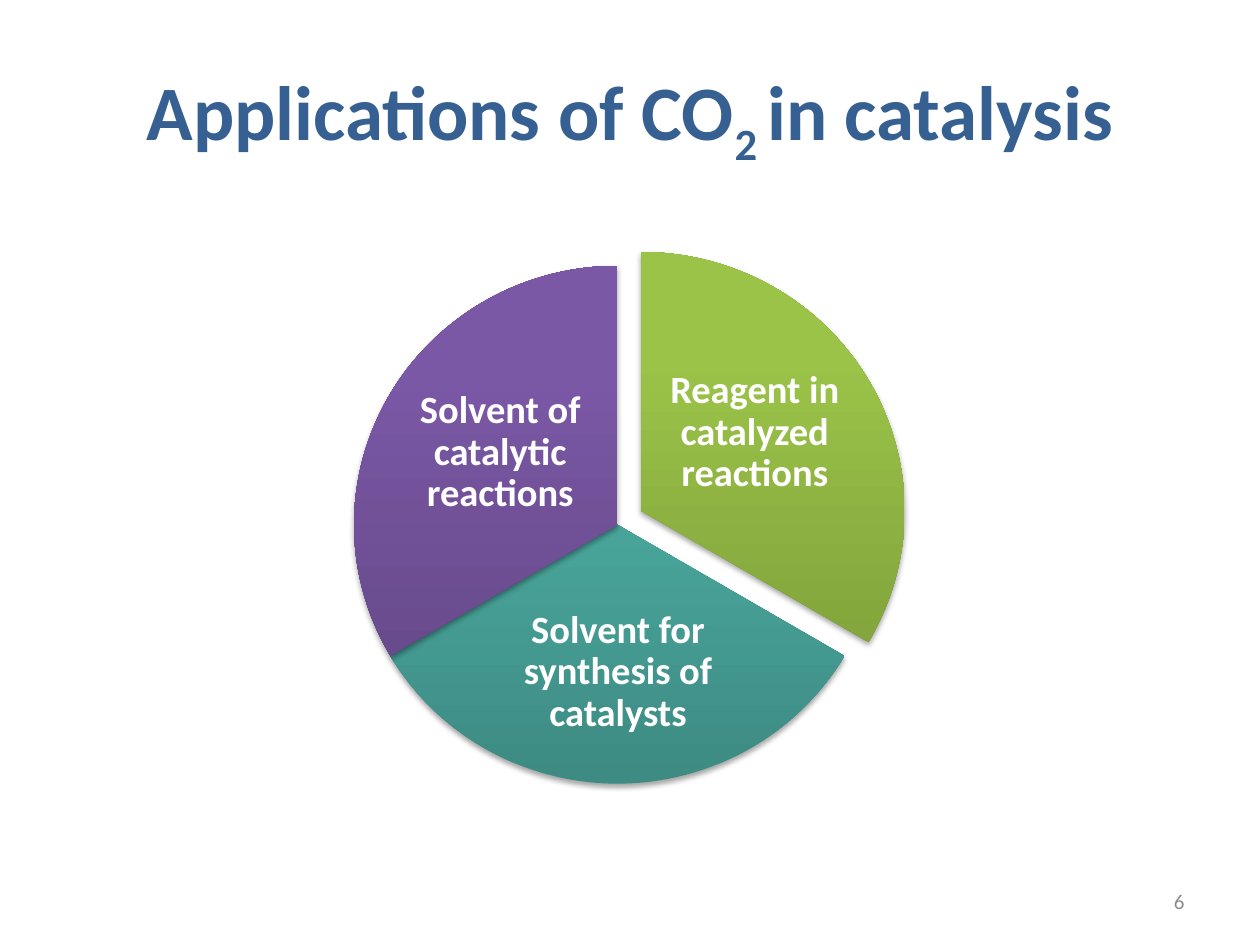
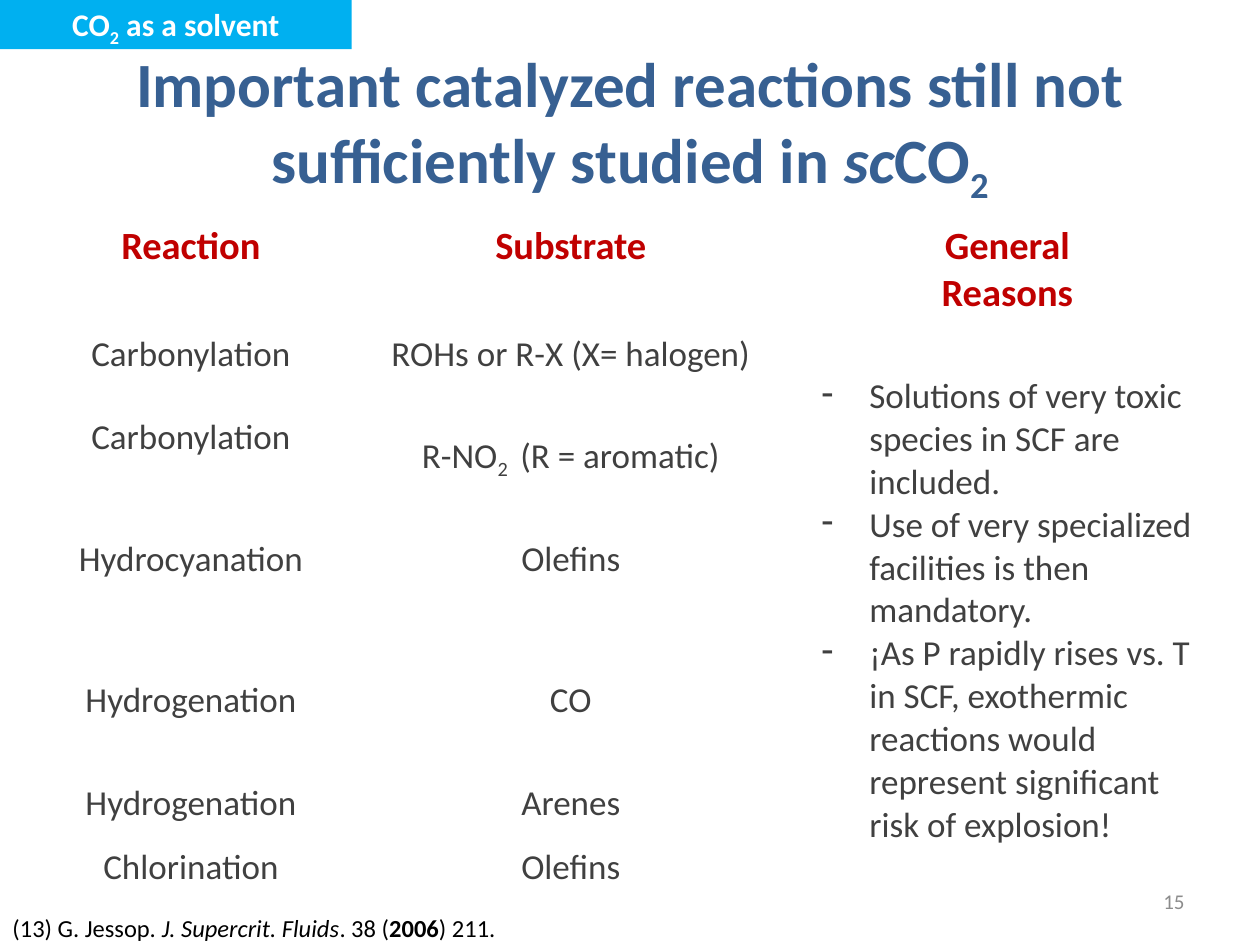
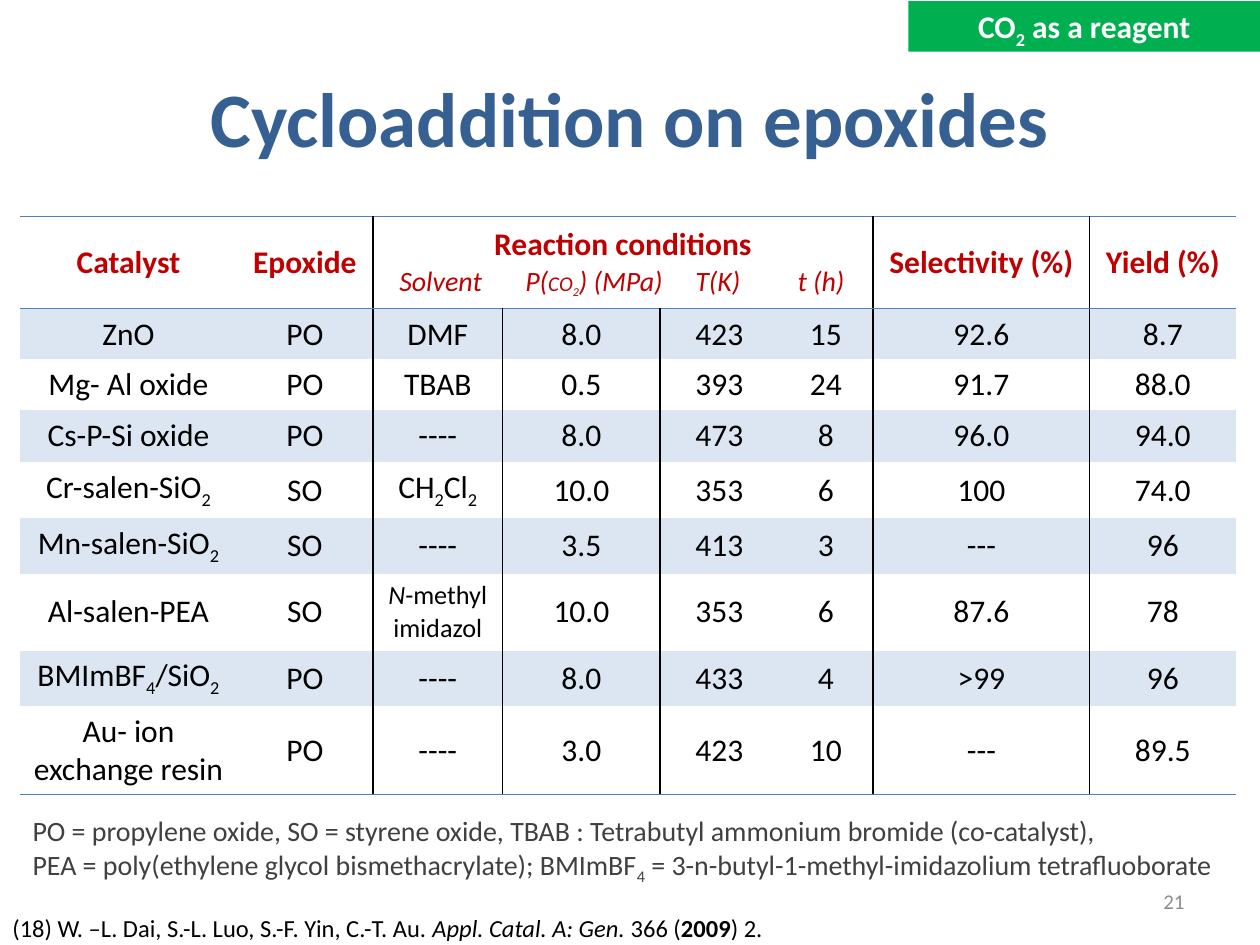
from dataclasses import dataclass
from typing import Any

from lxml.etree import SubElement
from pptx import Presentation
from pptx.dml.color import RGBColor
from pptx.enum.shapes import MSO_SHAPE as Preset
from pptx.enum.text import MSO_ANCHOR as Anchor
from pptx.enum.text import MSO_AUTO_SIZE as AutoSize
from pptx.enum.text import PP_ALIGN as Align
from pptx.oxml.ns import qn
from pptx.util import Emu, Inches, Pt

# Slide grid: 100 columns by 75 rows of square cells
SLIDE_WIDTH, SLIDE_HEIGHT = Inches(10), Inches(7.5)
COLUMNS, ROWS = 100, 75
UNIT = SLIDE_WIDTH / COLUMNS

# Shared look
FONT = "Calibri"
NO_STYLE_TABLE = "{2D5ABB26-0587-4C30-8999-92F81FD0307C}"
TITLE_BLUE = RGBColor(0x37, 0x60, 0x92)
HEADER_RED = RGBColor(0xC0, 0x00, 0x00)
RULE_BLUE = RGBColor(0x4F, 0x81, 0xBD)
ROW_TINT = RGBColor(0xDC, 0xE6, 0xF2)
SOLVENT_CYAN = RGBColor(0x00, 0xB0, 0xF0)
REAGENT_GREEN = RGBColor(0x00, 0xB0, 0x50)
BODY_GREY = RGBColor(0x40, 0x40, 0x40)
NUMBER_GREY = RGBColor(0x8C, 0x8C, 0x8C)
BLACK = RGBColor(0x00, 0x00, 0x00)
WHITE = RGBColor(0xFF, 0xFF, 0xFF)

# Marks that switch a format on and off inside a text
MARKS: dict[str, dict[str, Any]] = {
    "~": {"baseline": -25000},
    "*": {"italic": True},
    "^": {"bold": True},
    "`": {"size": Pt(12)},
    "|": {"size": Pt(15)},
}


@dataclass(frozen=True)
class Frame:
    """A place on the slide, in grid columns and rows."""
    left: float
    top: float
    width: float
    height: float

    def lengths(self) -> tuple[Emu, ...]:
        return tuple(map(grid, (self.left, self.top, self.width, self.height)))


@dataclass(frozen=True)
class Style:
    size: float
    color: RGBColor
    bold: bool = False
    align: Align = Align.LEFT
    line_spacing: float | None = None


@dataclass(frozen=True)
class Slice:
    text: str
    label: Frame
    dark: RGBColor
    light: RGBColor
    shift: tuple[float, float] = (0, 0)


@dataclass(frozen=True)
class Band:
    text: str
    color: RGBColor
    left: float
    top: float


TITLE = Style(44, TITLE_BLUE, True, Align.CENTER)
LONG_TITLE = Style(36, TITLE_BLUE, True, Align.CENTER)
BAND = Style(18, WHITE, True, Align.CENTER)
REFERENCE = Style(14, BLACK)
NUMBER = Style(12, NUMBER_GREY, align=Align.RIGHT)
SLICE_LABEL = Style(22, WHITE, True, Align.CENTER, 0.9)
REACTION_HEAD = Style(22, HEADER_RED, True, Align.CENTER)
REACTION_CELL = Style(20, BODY_GREY, align=Align.CENTER)
REASON = Style(20, BODY_GREY)
CATALYST_HEAD = Style(18, HEADER_RED, True, Align.CENTER)
CONDITION_HEAD = Style(16, HEADER_RED)
CATALYST_CELL = Style(18, BLACK, align=Align.CENTER)
ABBREVIATION = Style(16, BODY_GREY, align=Align.JUSTIFY)

# Slide 1: three equal slices, clockwise from the top
PIE_FRAME = Frame(28.1, 21.1, 41.8, 41.1)
SLICES = [
    Slice("Reagent in catalyzed reactions", Frame(52.8, 27.5, 14.2, 13.7),
          RGBColor(0x77, 0x97, 0x37), RGBColor(0x9B, 0xC3, 0x48), (1.9, -1.1)),
    Slice("Solvent for synthesis of catalysts", Frame(39.6, 47, 18.9, 12.7),
          RGBColor(0x3D, 0x8B, 0x83), RGBColor(0x50, 0xB5, 0xAA)),
    Slice("Solvent of catalytic reactions", Frame(32.6, 29.1, 14.2, 13.7),
          RGBColor(0x5F, 0x44, 0x80), RGBColor(0x7B, 0x58, 0xA6)),
]

# Slide 2: reactions and the reasons they are little studied
REACTION_WIDTHS = [22.5, 37.8, 31.5]
REACTION_HEIGHTS = [8.4, 5.1, 7.7, 11.2, 11.2, 5.1, 5.1]
REACTION_HEADS = ["Reaction", "Substrate", "General\nReasons"]
REACTIONS = [
    ("Carbonylation", "ROHs or R-X (X= halogen)"),
    ("Carbonylation", "R-NO~2 ~ (R = aromatic)"),
    ("Hydrocyanation", "Olefins"),
    ("Hydrogenation", "CO"),
    ("Hydrogenation", "Arenes"),
    ("Chlorination", "Olefins"),
]
LOWERED_SUBSTRATE = (2, 1)
REASONS = [
    "Solutions of very toxic species in SCF are included.",
    "Use of very specialized facilities is then mandatory.",
    "¡As P rapidly rises vs. T in SCF, exothermic reactions would "
    "represent significant risk of explosion!",
]

# Slide 3: catalysts
CATALYST_WIDTHS = [17.2, 10.8, 10.3, 12.5, 9.4, 7.5, 17.2, 11.6]
CATALYST_HEIGHTS = [7.3, 4, 4, 4.2, 4.4, 4.4, 6.1, 4.4, 7]
CATALYST_HEADS = ["Catalyst", "Epoxide", "Reaction conditions", "", "", "",
                  "Selectivity (%)", "Yield (%)"]
CONDITIONS = "\t*Solvent\tP(`CO~2~`) (MPa)\tT(K)\tt (h)*"
CONDITION_TABS = [1.1, 11.1, 24.6, 32.7]
CONDITION_COLUMNS = (2, 5)
HEAD_DIVIDERS = (1, 5)
BODY_DIVIDERS = (1, 2, 5, 6)
CATALYSTS = [
    ("ZnO", "PO", "DMF", "8.0", "423", "15", "92.6", "8.7"),
    ("Mg- Al oxide", "PO", "TBAB", "0.5", "393", "24", "91.7", "88.0"),
    ("Cs-P-Si oxide", "PO", "----", "8.0", "473", "8", "96.0", "94.0"),
    ("Cr-salen-SiO~2~", "SO", "CH~2~Cl~2~", "10.0", "353", "6", "100", "74.0"),
    ("Mn-salen-SiO~2~", "SO", "----", "3.5", "413", "3", "---", "96"),
    ("Al-salen-PEA", "SO", "|*N*-methyl imidazol|", "10.0", "353", "6", "87.6", "78"),
    ("BMImBF~4~/SiO~2~", "PO", "----", "8.0", "433", "4", ">99", "96"),
    ("Au- ion exchange resin", "PO", "----", "3.0", "423", "10", "---", "89.5"),
]
ABBREVIATIONS = [
    "PO = propylene oxide, SO = styrene oxide, TBAB : Tetrabutyl ammonium "
    "bromide (co-catalyst),",
    "PEA = poly(ethylene glycol bismethacrylate); BMImBF~4~ = "
    "3-n-butyl-1-methyl-imidazolium tetrafluoborate",
]


def grid(cells: float) -> Emu:
    return Emu(round(cells * UNIT))


def set_all(target: Any, values: dict[str, Any]) -> None:
    for name, value in values.items():
        setattr(target, name, value)


# Text
def add_span(para: Any, text: str, style: Style, active: set[str]) -> None:
    span = para.add_run()
    span.text = text
    values = {"name": FONT, "size": Pt(style.size), "bold": style.bold}
    for mark in sorted(active):
        values.update(MARKS[mark])
    baseline = values.pop("baseline", None)
    set_all(span.font, values)
    span.font.color.rgb = style.color
    if baseline:
        span.font._rPr.set("baseline", str(baseline))


def write_para(para: Any, text: str, style: Style) -> None:
    set_all(para, {"alignment": style.align, "line_spacing": style.line_spacing})
    active: set[str] = set()
    pending = ""
    for char in text:
        if char not in MARKS:
            pending += char
            continue
        if pending:
            add_span(para, pending, style, active)
        pending = ""
        active ^= {char}
    if pending:
        add_span(para, pending, style, active)


def write(frame: Any, lines: list[str], style: Style) -> None:
    for index, line in enumerate(lines):
        para = frame.add_paragraph() if index else frame.paragraphs[0]
        write_para(para, line, style)


def add_text(shapes: Any, place: Frame, lines: list[str], style: Style,
             **values: Any) -> None:
    box = shapes.add_textbox(*place.lengths())
    set_all(box.text_frame, {"word_wrap": True, **values})
    write(box.text_frame, lines, style)


# Parts the slides share
def add_page(deck: Any, title: str, style: Style, place: Frame, number: int) -> Any:
    page = deck.slides.add_slide(deck.slide_layouts[5])
    holder = page.shapes.title
    set_all(holder, dict(zip(("left", "top", "width", "height"), place.lengths())))
    set_all(holder.text_frame, {"auto_size": AutoSize.NONE, "word_wrap": True,
                                "vertical_anchor": Anchor.MIDDLE})
    write(holder.text_frame, [title], style)
    add_text(page.shapes, Frame(71.7, 69.5, 23.3, 4), [str(number)], NUMBER,
             vertical_anchor=Anchor.MIDDLE)
    return page


def add_band(page: Any, band: Band) -> None:
    place = Frame(band.left, band.top, 27.9, 4)
    box = page.shapes.add_shape(Preset.RECTANGLE, *place.lengths())
    box.shadow.inherit = False
    box.fill.solid()
    box.fill.fore_color.rgb = band.color
    box.line.fill.background()
    box.text_frame.vertical_anchor = Anchor.TOP
    write(box.text_frame, [band.text], BAND)


def add_reference(page: Any, text: str, width: float) -> None:
    add_text(page.shapes, Frame(0, 72, width, 3.4), [text], REFERENCE)


# Tables
def add_grid_table(page: Any, left: float, top: float, widths: list[float],
                   heights: list[float]) -> Any:
    place = Frame(left, top, sum(widths), sum(heights))
    table = page.shapes.add_table(len(heights), len(widths), *place.lengths()).table
    set_all(table, {"first_row": False, "horz_banding": False})
    table._tbl.tblPr.find(qn("a:tableStyleId")).text = NO_STYLE_TABLE
    for column, width in zip(table.columns, widths):
        column.width = grid(width)
    for row, height in zip(table.rows, heights):
        row.height = grid(height)
    return table


def fill_cell(cell: Any, lines: list[str], style: Style,
              fill: RGBColor | None = None, anchor: Anchor = Anchor.MIDDLE) -> None:
    cell.vertical_anchor = anchor
    if fill is None:
        cell.fill.background()
    else:
        cell.fill.solid()
        cell.fill.fore_color.rgb = fill
    write(cell.text_frame, lines, style)


def add_borders(cell: Any, borders: dict[str, RGBColor]) -> None:
    properties = cell._tc.get_or_add_tcPr()
    for side in "LRTB":
        if side in borders:
            line = SubElement(properties, qn(f"a:ln{side}"), w=str(Pt(1)))
            fill = SubElement(line, qn("a:solidFill"))
            SubElement(fill, qn("a:srgbClr"), val=str(borders[side]))


def add_dash(para: Any, indent: float) -> None:
    properties = para._p.get_or_add_pPr()
    properties.set("marL", str(grid(indent)))
    properties.set("indent", str(-grid(indent)))
    SubElement(properties, qn("a:buChar"), char="-")


def add_tabs(para: Any, stops: list[float]) -> None:
    tabs = SubElement(para._p.get_or_add_pPr(), qn("a:tabLst"))
    for stop in stops:
        SubElement(tabs, qn("a:tab"), pos=str(grid(stop)), algn="l")


# Slices
def add_soft_shadow(shape: Any) -> None:
    effects = SubElement(shape._element.spPr, qn("a:effectLst"))
    shadow = SubElement(effects, qn("a:outerShdw"), blurRad=str(Pt(3.1)),
                        dist=str(Pt(1.8)), dir="5400000", rotWithShape="0")
    color = SubElement(shadow, qn("a:srgbClr"), val=str(BLACK))
    SubElement(color, qn("a:alpha"), val="35000")


def add_slice(shapes: Any, index: int, part: Slice) -> None:
    right, down = part.shift
    place = Frame(PIE_FRAME.left + right, PIE_FRAME.top + down,
                  PIE_FRAME.width, PIE_FRAME.height)
    wedge = shapes.add_shape(Preset.PIE, *place.lengths())
    sweep = 360 / len(SLICES)
    for side in (0, 1):
        degrees = (270 + sweep * (index + side)) % 360
        wedge.adjustments[side] = degrees * 0.6
    wedge.fill.gradient()
    wedge.fill.gradient_angle = 90
    stops = zip(wedge.fill.gradient_stops, (0, 0.8), (part.dark, part.light))
    for stop, position, color in stops:
        stop.position = position
        stop.color.rgb = color
    wedge.line.fill.background()
    add_soft_shadow(wedge)
    inset = dict.fromkeys(
        ("margin_left", "margin_top", "margin_right", "margin_bottom"), grid(0.3))
    add_text(shapes, part.label, [part.text], SLICE_LABEL,
             vertical_anchor=Anchor.MIDDLE, **inset)


# Slides
def build_applications(deck: Any) -> None:
    page = add_page(deck, "Applications of CO~2 ~in catalysis", TITLE,
                    Frame(5, 3, 90, 12.5), 6)
    group = page.shapes.add_group_shape()
    for index, part in enumerate(SLICES):
        add_slice(group.shapes, index, part)


def build_reactions(deck: Any) -> None:
    title = ("Important catalyzed reactions still not sufficiently "
             "studied in *sc*CO~2~")
    page = add_page(deck, title, LONG_TITLE, Frame(0, 3.7, COLUMNS, 12.5), 15)
    add_reference(page, "(13) G. Jessop*. J. Supercrit. Fluids*. 38 (^2006^) 211.", 61.8)
    table = add_grid_table(page, 3.9, 17.2, REACTION_WIDTHS, REACTION_HEIGHTS)
    for column, head in enumerate(REACTION_HEADS):
        fill_cell(table.cell(0, column), head.split("\n"), REACTION_HEAD,
                  anchor=Anchor.TOP)
    for row, reaction in enumerate(REACTIONS, 1):
        for column, text in enumerate(reaction):
            fill_cell(table.cell(row, column), [text], REACTION_CELL)
    table.cell(*LOWERED_SUBSTRATE).margin_top = grid(3.8)
    reasons = table.cell(1, 2)
    reasons.merge(table.cell(len(REACTIONS), 2))
    fill_cell(reasons, REASONS, REASON)
    for para in reasons.text_frame.paragraphs:
        add_dash(para, 3.8)
    add_band(page, Band("CO~2~ as a solvent", SOLVENT_CYAN, 0, -0.1))


def build_epoxides(deck: Any) -> None:
    page = add_page(deck, "Cycloaddition on epoxides", TITLE,
                    Frame(0, 3, COLUMNS, 12.5), 21)
    add_reference(page, "(18) W. –L. Dai, S.-L. Luo, S.-F. Yin, C.-T. Au. "
                        "*Appl. Catal. A: Gen.* 366 (^2009^) 2.", 74.4)
    table = add_grid_table(page, 1.6, 17.2, CATALYST_WIDTHS, CATALYST_HEIGHTS)
    first, last = CONDITION_COLUMNS
    table.cell(0, first).merge(table.cell(0, last))
    for row, texts in enumerate([CATALYST_HEADS, *CATALYSTS]):
        dividers = BODY_DIVIDERS if row else HEAD_DIVIDERS
        style = CATALYST_CELL if row else CATALYST_HEAD
        for column, text in enumerate(texts):
            borders: dict[str, RGBColor] = {}
            if column - 1 in dividers:
                borders["L"] = BLACK
            if column in dividers:
                borders["R"] = BLACK
            if row == 0:
                borders["T"] = RULE_BLUE
            if row in (0, len(CATALYSTS)):
                borders["B"] = RULE_BLUE
            cell = table.cell(row, column)
            add_borders(cell, borders)
            fill_cell(cell, [text], style, ROW_TINT if row % 2 else None)
    conditions = table.cell(0, first).text_frame.add_paragraph()
    write_para(conditions, CONDITIONS, CONDITION_HEAD)
    add_tabs(conditions, CONDITION_TABS)
    add_text(page.shapes, Frame(1.6, 64.1, 96.9, 6.4), ABBREVIATIONS, ABBREVIATION)
    add_band(page, Band("CO~2~ as a reagent", REAGENT_GREEN, 72.1, 0.1))


def main() -> None:
    deck = Presentation()
    set_all(deck, {"slide_width": SLIDE_WIDTH, "slide_height": SLIDE_HEIGHT})
    for build in (build_applications, build_reactions, build_epoxides):
        build(deck)
    deck.save("out.pptx")


if __name__ == "__main__":
    main()
